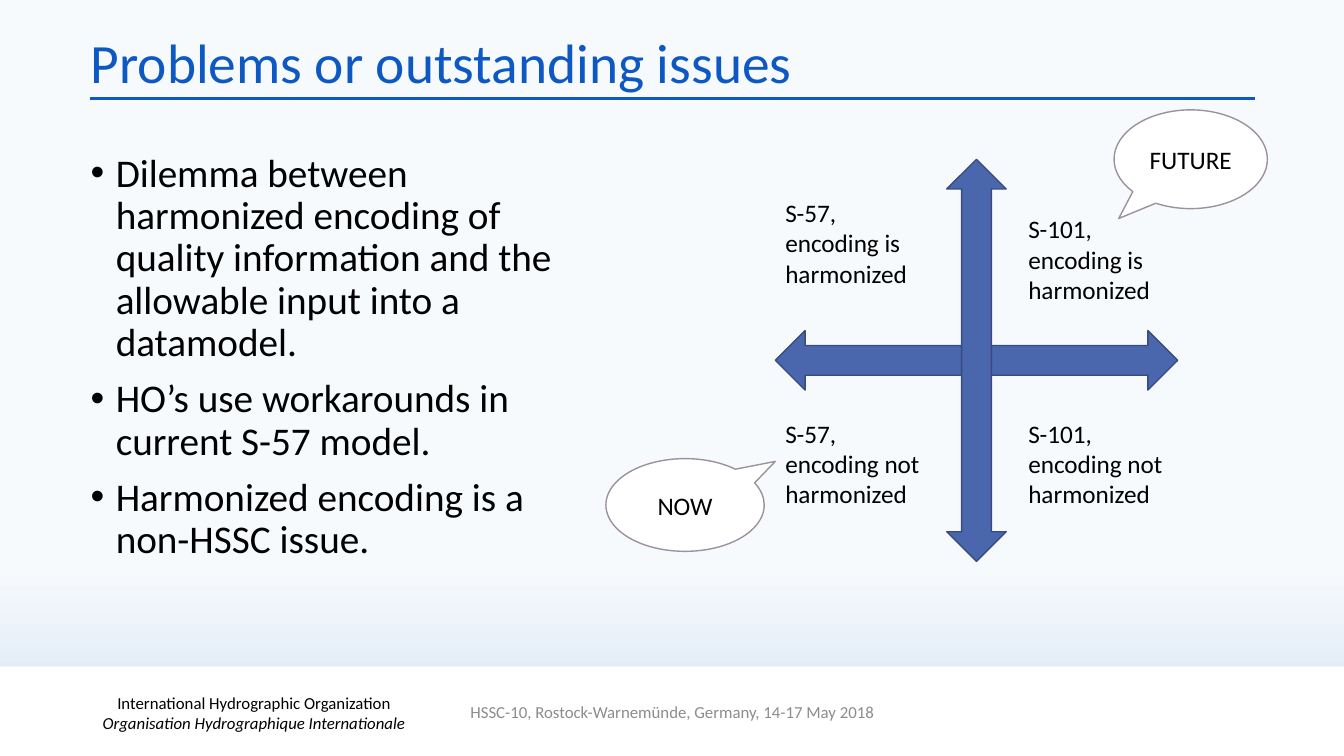
from lxml import etree
from pptx import Presentation
from pptx import util as u
from pptx.dml.color import RGBColor
from pptx.enum import shapes, text
from pptx.oxml import ns

PX = 9144  # EMU per px, 100 px to the inch

BLUE = RGBColor(0x0E, 0x58, 0xC4)
BLACK = RGBColor(0, 0, 0)
WHITE = RGBColor(0xFF, 0xFF, 0xFF)
GREY = RGBColor(0x8C, 0x8C, 0x8C)
ARROW_FILL = RGBColor(0x4A, 0x66, 0xAC)
ARROW_LINE = RGBColor(0x37, 0x4B, 0x7F)
CALLOUT_LINE = RGBColor(0x9D, 0x90, 0xA0)
SKY_TOP = RGBColor(0xF7, 0xFA, 0xFD)
SKY_BOTTOM = RGBColor(0xD0, 0xE2, 0xF1)

CENTER = text.PP_ALIGN.CENTER
MIDDLE = text.MSO_ANCHOR.MIDDLE
TOP = text.MSO_ANCHOR.TOP


def emu(*lengths):
    return [u.Emu(length * PX) for length in lengths]


def add_bullet(para):
    properties = para._p.get_or_add_pPr()
    properties.set("marL", str(25 * PX))
    properties.set("indent", str(-25 * PX))
    font = etree.SubElement(properties, ns.qn("a:buFont"))
    font.set("typeface", "Arial")
    bullet = etree.SubElement(properties, ns.qn("a:buChar"))
    bullet.set("char", "•")


def write(frame, *paragraphs, size=18, color=BLACK, align=text.PP_ALIGN.LEFT,
          anchor=TOP, spacing=None, gap=0, bullets=False):
    """Fill a text frame; a paragraph is a string, or a list of (words, italic) lines."""
    frame.word_wrap = True
    frame.auto_size = text.MSO_AUTO_SIZE.NONE
    frame.vertical_anchor = anchor
    for number, lines in enumerate(paragraphs):
        para = frame.add_paragraph() if number else frame.paragraphs[0]
        para.alignment = align
        para.line_spacing = spacing
        para.space_before = u.Pt(gap if number else 0)
        if bullets:
            add_bullet(para)
        if isinstance(lines, str):
            lines = [(lines, False)]
        for row, (words, italic) in enumerate(lines):
            if row:
                para.add_line_break()
            span = para.add_run()
            span.text = words
            span.font.name = "Calibri"
            span.font.size = u.Pt(size)
            span.font.italic = italic
            span.font.color.rgb = color


def add_text(page, box, *paragraphs, **style):
    write(page.shapes.add_textbox(*emu(*box)).text_frame, *paragraphs, **style)


def add_filled(page, kind, box, fill, line=None):
    shape = page.shapes.add_shape(kind, *emu(*box))
    shape.shadow.inherit = False
    shape.fill.solid()
    shape.fill.fore_color.rgb = fill
    if line is None:
        shape.line.fill.background()
    else:
        shape.line.color.rgb = line
        shape.line.width = u.Pt(1)
    return shape


def add_background(page):
    fill = page.background.fill
    fill.gradient()
    fill.gradient_angle = 270
    for stop, position, color in zip(fill.gradient_stops, (0.75, 1), (SKY_TOP, SKY_BOTTOM)):
        stop.position = position
        stop.color.rgb = color


def add_heading(page, box):
    left, top, width, height = box
    title = page.shapes.title
    title.left, title.top, title.width, title.height = emu(left, top, 982, height)
    write(title.text_frame, "Problems or outstanding issues",
          size=39.6, color=BLUE, anchor=MIDDLE, spacing=0.9)
    y = top + height - 2
    rule = page.shapes.add_connector(shapes.MSO_CONNECTOR.STRAIGHT,
                                     *emu(left + 9, y, left + width, y))
    rule.line.color.rgb = BLUE
    rule.line.width = u.Pt(2.25)
    etree.SubElement(rule._element.spPr, ns.qn("a:effectLst"))


def add_footer(page, box):
    left, top, width, height = box
    add_filled(page, shapes.MSO_SHAPE.RECTANGLE, box, WHITE)
    style = dict(size=12, align=CENTER, anchor=MIDDLE)
    add_text(page, (left + 27, top + 26, 450, 40),
             [("International Hydrographic Organization", False),
              ("Organisation Hydrographique Internationale", True)], **style)
    add_text(page, (left + 442, top + 25, 450, 40),
             "HSSC-10, Rostock-Warnemünde, Germany, 14-17 May 2018", color=GREY, **style)


def add_callout(page, box, words, tip):
    """Add a speech bubble whose tip is given as fractions of its size from its centre."""
    bubble = add_filled(page, shapes.MSO_SHAPE.OVAL_CALLOUT, box, WHITE, CALLOUT_LINE)
    bubble.adjustments[0], bubble.adjustments[1] = tip
    write(bubble.text_frame, words, align=CENTER, anchor=MIDDLE)


def add_quadrants(page, box):
    left, top, width, height = box
    thickness = 59
    for rotation in (0, 90):
        arrow = add_filled(page, shapes.MSO_SHAPE.LEFT_RIGHT_ARROW,
                           (left, top + (height - thickness) // 2, width, thickness),
                           ARROW_FILL, ARROW_LINE)
        arrow.rotation = rotation
    columns = (("S-57", 0, 33), ("S-101", 241, 49))
    for model, across, upper in columns:
        for state, down in (("is", upper), ("not", 252)):
            add_text(page, (left + across, top + down, 158, 101),
                     f"{model}, encoding {state} harmonized")
    add_callout(page, (left - 168, top + 297, 157, 92), "NOW", (0.57, -0.47))
    add_callout(page, (left + 336, top - 49, 152, 98), "FUTURE", (-0.47, 0.6))


def main():
    deck = Presentation()
    deck.slide_width, deck.slide_height = emu(1333, 750)
    page = deck.slides.add_slide(deck.slide_layouts[5])
    add_background(page)
    add_footer(page, (0, 661, 1333, 89))
    add_heading(page, (80, 30, 1165, 70))
    add_text(page, (80, 147, 494, 479),
             "Dilemma between harmonized encoding of quality information "
             "and the allowable input into a datamodel.",
             "HO’s use workarounds in current S-57 model.",
             "Harmonized encoding is a non-HSSC issue.",
             size=28, spacing=0.9, gap=10, bullets=True)
    add_quadrants(page, (769, 158, 399, 399))
    deck.save("out.pptx")


if __name__ == "__main__":
    main()
